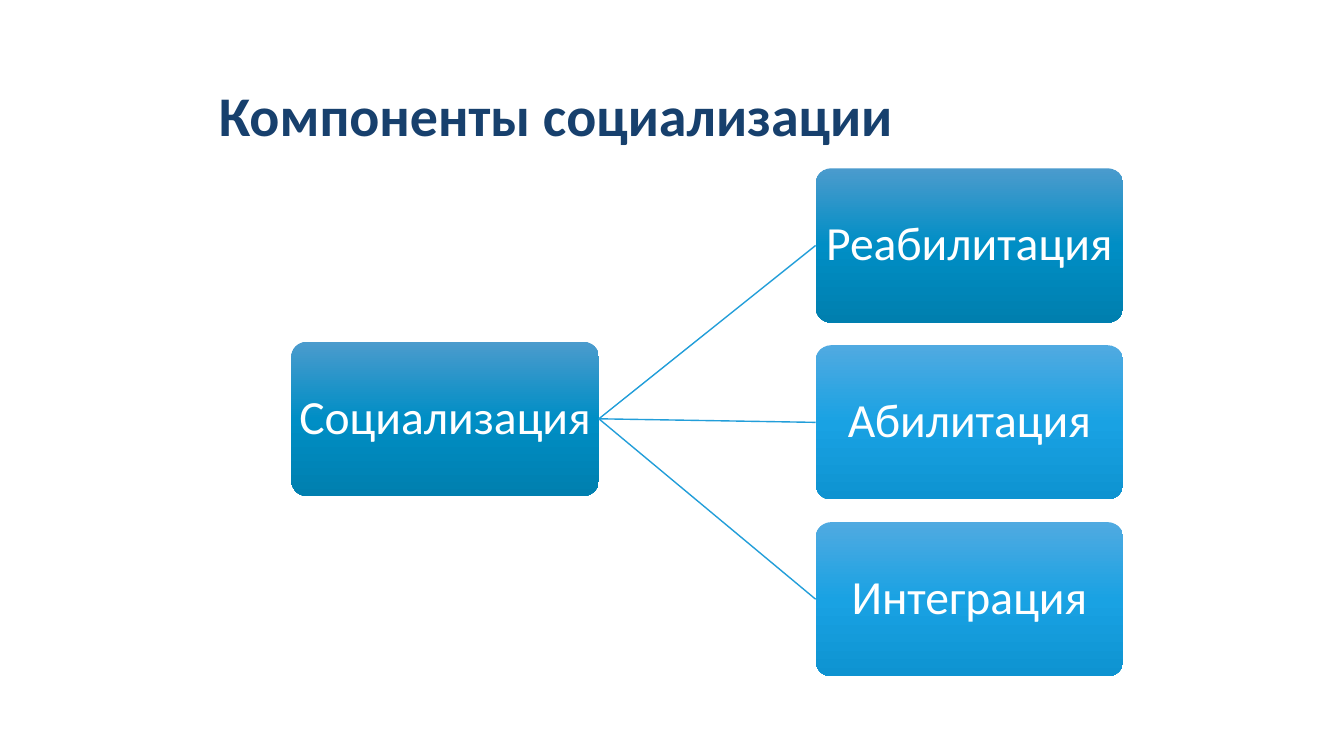
from copy import deepcopy
from dataclasses import dataclass

from lxml import etree
from pptx import Presentation
from pptx.dml.color import RGBColor
from pptx.enum.shapes import MSO_CONNECTOR, MSO_SHAPE
from pptx.enum.text import MSO_ANCHOR, PP_ALIGN
from pptx.oxml.ns import qn
from pptx.shapes.autoshape import Shape
from pptx.slide import Slide
from pptx.text.text import TextFrame
from pptx.util import Emu, Inches, Pt

ROUNDED = MSO_SHAPE.ROUNDED_RECTANGLE
STRAIGHT = MSO_CONNECTOR.STRAIGHT
MIDDLE = MSO_ANCHOR.MIDDLE
LEFT, CENTER = PP_ALIGN.LEFT, PP_ALIGN.CENTER
LEFT_SITE, RIGHT_SITE = 1, 3
TITLE_ONLY_LAYOUT = 5

SLIDE_WIDTH, SLIDE_HEIGHT = Inches(13.33), Inches(7.5)

# Grid of 100 columns by 100 rows
NODE_WIDTH, NODE_HEIGHT = 22.88, 20.4
ROOT_COLUMN, ROOT_ROW = 21.68, 45.2
BRANCH_COLUMN, BRANCH_ROW, BRANCH_PITCH = 60.69, 22.27, 23.4


@dataclass(frozen=True)
class Theme:
    font: str = "Calibri"
    title_color: str = "17406D"
    node_text: str = "FFFFFF"
    line: str = "229ED9"
    deep: tuple[str, ...] = ("4B9BCD", "008EC5", "007FAF")
    bright: tuple[str, ...] = ("50AAE1", "19A2E3", "0E93D1")
    title_size: int = 40
    node_size: int = 34
    line_width: int = 1


@dataclass(frozen=True)
class Node:
    text: str
    column: float
    row: float
    gradient: tuple[str, ...]


THEME = Theme()
ROOT = Node("Социализация", ROOT_COLUMN, ROOT_ROW, THEME.deep)
BRANCHES = [
    Node(text, BRANCH_COLUMN, BRANCH_ROW + index * BRANCH_PITCH, gradient)
    for index, (text, gradient) in enumerate([
        ("Реабилитация", THEME.deep),
        ("Абилитация", THEME.bright),
        ("Интеграция", THEME.bright),
    ])
]


def columns(count: float) -> Emu:
    return Emu(round(SLIDE_WIDTH * count / 100))


def rows(count: float) -> Emu:
    return Emu(round(SLIDE_HEIGHT * count / 100))


def write(frame: TextFrame, text: str, *, size: int, color: str,
          bold: bool = False, align: PP_ALIGN = LEFT) -> None:
    frame.word_wrap = True
    frame.vertical_anchor = MIDDLE
    paragraph = frame.paragraphs[0]
    paragraph.alignment = align
    paragraph.line_spacing = 0.9
    run = paragraph.add_run()
    run.text = text
    run.font.name = THEME.font
    run.font.size = Pt(size)
    run.font.bold = bold
    run.font.color.rgb = RGBColor.from_string(color)


def fill_gradient(shape: Shape, colors: tuple[str, ...]) -> None:
    """Fill from top to bottom with evenly spaced colours."""
    shape.fill.gradient()
    shape.fill.gradient_angle = 270
    stop_list = shape.element.spPr.find(qn("a:gradFill")).find(qn("a:gsLst"))
    while len(stop_list) < len(colors):
        stop_list.append(deepcopy(stop_list[0]))
    for index, (stop, color) in enumerate(zip(shape.fill.gradient_stops, colors)):
        stop.position = index / (len(colors) - 1)
        stop.color.rgb = RGBColor.from_string(color)


def add_node(slide: Slide, node: Node) -> Shape:
    shape = slide.shapes.add_shape(
        ROUNDED, columns(node.column), rows(node.row),
        columns(NODE_WIDTH), rows(NODE_HEIGHT))
    shape.adjustments[0] = 0.1
    shape.shadow.inherit = False
    shape.line.fill.background()
    fill_gradient(shape, node.gradient)
    frame = shape.text_frame
    frame.margin_left = frame.margin_right = Inches(0.02)
    frame.margin_top = frame.margin_bottom = Inches(0.02)
    write(frame, node.text, size=THEME.node_size, color=THEME.node_text, align=CENTER)
    return shape


def connect(slide: Slide, start: Shape, end: Shape) -> None:
    connector = slide.shapes.add_connector(STRAIGHT, 0, 0, 0, 0)
    connector.begin_connect(start, RIGHT_SITE)
    connector.end_connect(end, LEFT_SITE)
    connector.line.color.rgb = RGBColor.from_string(THEME.line)
    connector.line.width = Pt(THEME.line_width)
    etree.SubElement(connector.element.spPr, qn("a:effectLst"))


def add_title(slide: Slide, text: str) -> None:
    title = slide.shapes.title
    title.left, title.top = columns(15.53), rows(6)
    title.width, title.height = columns(81.85), rows(19.33)
    write(title.text_frame, text, size=THEME.title_size,
          color=THEME.title_color, bold=True)


def main() -> None:
    presentation = Presentation()
    presentation.slide_width = SLIDE_WIDTH
    presentation.slide_height = SLIDE_HEIGHT
    slide = presentation.slides.add_slide(
        presentation.slide_layouts[TITLE_ONLY_LAYOUT])
    add_title(slide, "Компоненты социализации")
    root = add_node(slide, ROOT)
    for branch in BRANCHES:
        connect(slide, root, add_node(slide, branch))
    presentation.save("out.pptx")


if __name__ == "__main__":
    main()
